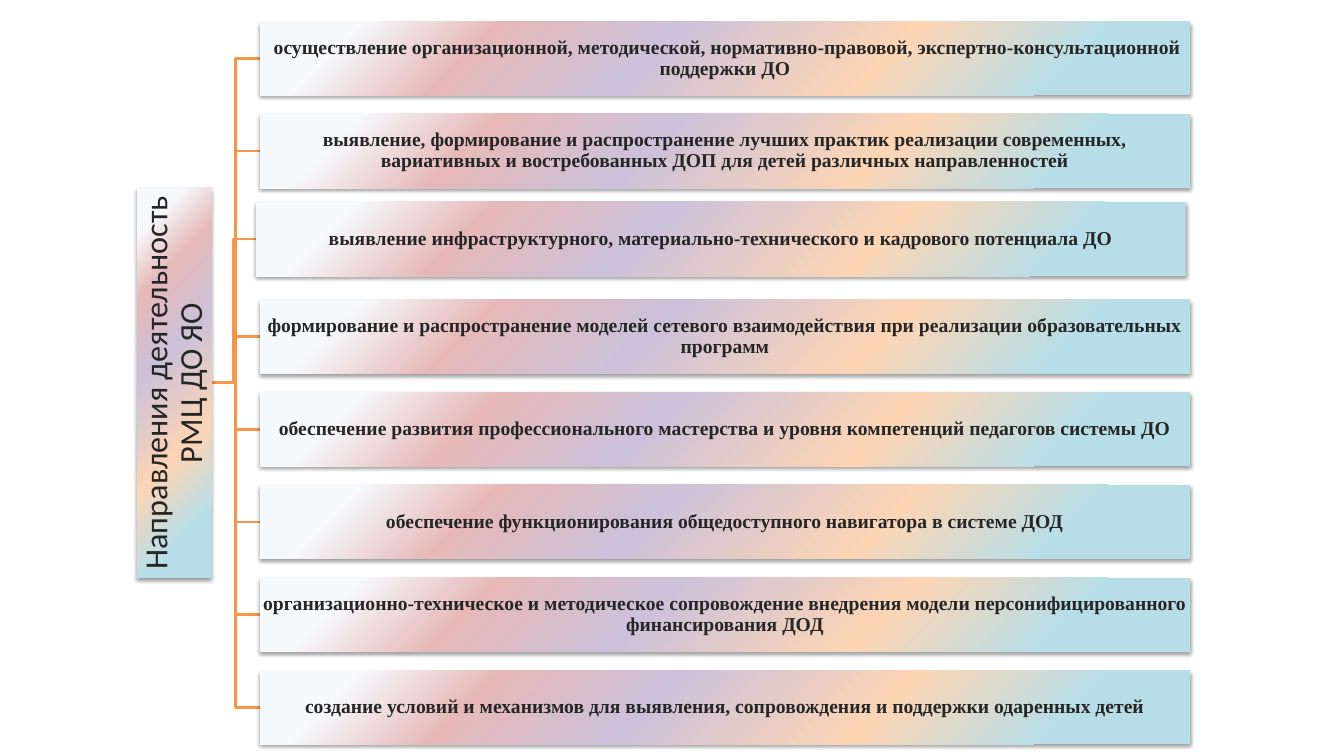
from pptx import Presentation
from pptx.dml.color import RGBColor
from pptx.enum.shapes import MSO_SHAPE
from pptx.enum.text import MSO_ANCHOR, PP_ALIGN
from pptx.oxml import parse_xml
from pptx.oxml.ns import nsdecls
from pptx.util import Inches, Pt

RECT = MSO_SHAPE.RECTANGLE
MIDDLE = MSO_ANCHOR.MIDDLE
CENTER = PP_ALIGN.CENTER

INK = RGBColor(0x26, 0x26, 0x26)
ORANGE = RGBColor(0xF7, 0x96, 0x46)
BLACK = RGBColor(0x00, 0x00, 0x00)
STOPS = [
    (10, RGBColor(0xF6, 0xF9, 0xFC)),
    (24, RGBColor(0xE6, 0xB9, 0xB8)),
    (42, RGBColor(0xCC, 0xC1, 0xDA)),
    (66, RGBColor(0xFC, 0xD5, 0xB5)),
    (85, RGBColor(0xB7, 0xDE, 0xE8)),
]

LEFT, TOP = 2.1, 0.21
COL, ROW = 0.24, 0.92
BAR_COLS, BAR_ROWS = 38.42, 0.8
LABEL_COLS, LABEL_ROWS = 3.08, 4.21

LABEL = "Направления деятельность РМЦ ДО ЯО"
TASKS = [
    " осуществление организационной, методической, нормативно-правовой, экспертно-консультационной поддержки ДО",
    "выявление, формирование и распространение лучших практик реализации современных, вариативных и востребованных ДОП для детей различных направленностей",
    "выявление инфраструктурного, материально-технического и кадрового потенциала ДО",
    "формирование и распространение моделей сетевого взаимодействия при реализации образовательных программ",
    "обеспечение развития профессионального мастерства и уровня компетенций педагогов системы ДО",
    "обеспечение функционирования общедоступного навигатора в системе ДОД",
    "организационно-техническое и методическое сопровождение внедрения модели персонифицированного финансирования ДОД",
    "создание условий и механизмов для выявления, сопровождения и поддержки одаренных детей",
]
SHIFTS = {2: (-0.17, -0.05)}


class Chart:
    def __init__(self, slide):
        self.shapes = slide.shapes

    def point(self, col, row):
        return Inches(LEFT + col * COL), Inches(TOP + row * ROW)

    def paint(self, shape):
        shape.line.fill.background()
        shape.fill.background()
        stops = "".join(
            f'<a:gs pos="{pos * 1000}"><a:srgbClr val="{color}"/></a:gs>'
            for pos, color in STOPS
        )
        grad = parse_xml(
            f'<a:gradFill {nsdecls("a")} rotWithShape="0"><a:gsLst>{stops}</a:gsLst>'
            '<a:path path="circle"><a:fillToRect r="100000" b="100000"/></a:path>'
            "</a:gradFill>"
        )
        props = shape._element.spPr
        props.replace(props.find("./{*}noFill"), grad)
        shape.shadow.inherit = False
        props.find("./{*}effectLst").append(parse_xml(
            f'<a:outerShdw {nsdecls("a")} blurRad="{Pt(3.1)}" dist="{Pt(1.6)}" '
            'dir="5400000" rotWithShape="0">'
            f'<a:srgbClr val="{BLACK}"><a:alpha val="38000"/></a:srgbClr></a:outerShdw>'
        ))

    def box(self, spot, size, text, font, points, bold, inset, turn=0):
        shape = self.shapes.add_shape(RECT, *spot, *size)
        shape.rotation = turn
        self.paint(shape)
        frame = shape.text_frame
        frame.word_wrap = True
        frame.vertical_anchor = MIDDLE
        frame.margin_left = frame.margin_right = Inches(inset)
        frame.margin_top = frame.margin_bottom = Inches(inset)
        para = frame.paragraphs[0]
        para.text = text
        para.alignment = CENTER
        para.line_spacing = 0.9
        para.font.name = font
        para.font.size = Pt(points)
        para.font.bold = bold
        para.font.color.rgb = INK

    def label(self, text, row):
        x, y = self.point(-LABEL_COLS / 2, row)
        wide, high = Inches(LABEL_ROWS * ROW), Inches(LABEL_COLS * COL)
        spot = x - wide // 2, y - high // 2
        self.box(spot, (wide, high), text, "Calibri", 23, False, 0.02, 270)

    def bar(self, text, col, row):
        size = Inches(BAR_COLS * COL), Inches(BAR_ROWS * ROW)
        self.box(self.point(col, row), size, text, "Times New Roman", 14, True, 0.01)

    def branch(self, start, col, row):
        path = self.shapes.build_freeform(*self.point(0, start))
        bends = [(col / 2, start), (col / 2, row), (col, row)]
        path.add_line_segments([self.point(*bend) for bend in bends], close=False)
        shape = path.convert_to_shape()
        shape.fill.background()
        shape.line.color.rgb = ORANGE
        shape.line.width = Pt(2)
        shape.shadow.inherit = False


def main():
    deck = Presentation()
    deck.slide_width, deck.slide_height = Inches(13.33), Inches(7.5)
    chart = Chart(deck.slides.add_slide(deck.slide_layouts[6]))
    spots = []
    for row in range(len(TASKS)):
        right, down = SHIFTS.get(row, (0, 0))
        spots.append((2 + right, row + down))
    half = BAR_ROWS / 2
    center = (len(TASKS) - 1) / 2 + half
    for col, row in reversed(spots):
        chart.branch(center, col, row + half)
    chart.label(LABEL, center)
    for text, spot in zip(TASKS, spots):
        chart.bar(text, *spot)
    deck.save("out.pptx")


if __name__ == "__main__":
    main()
